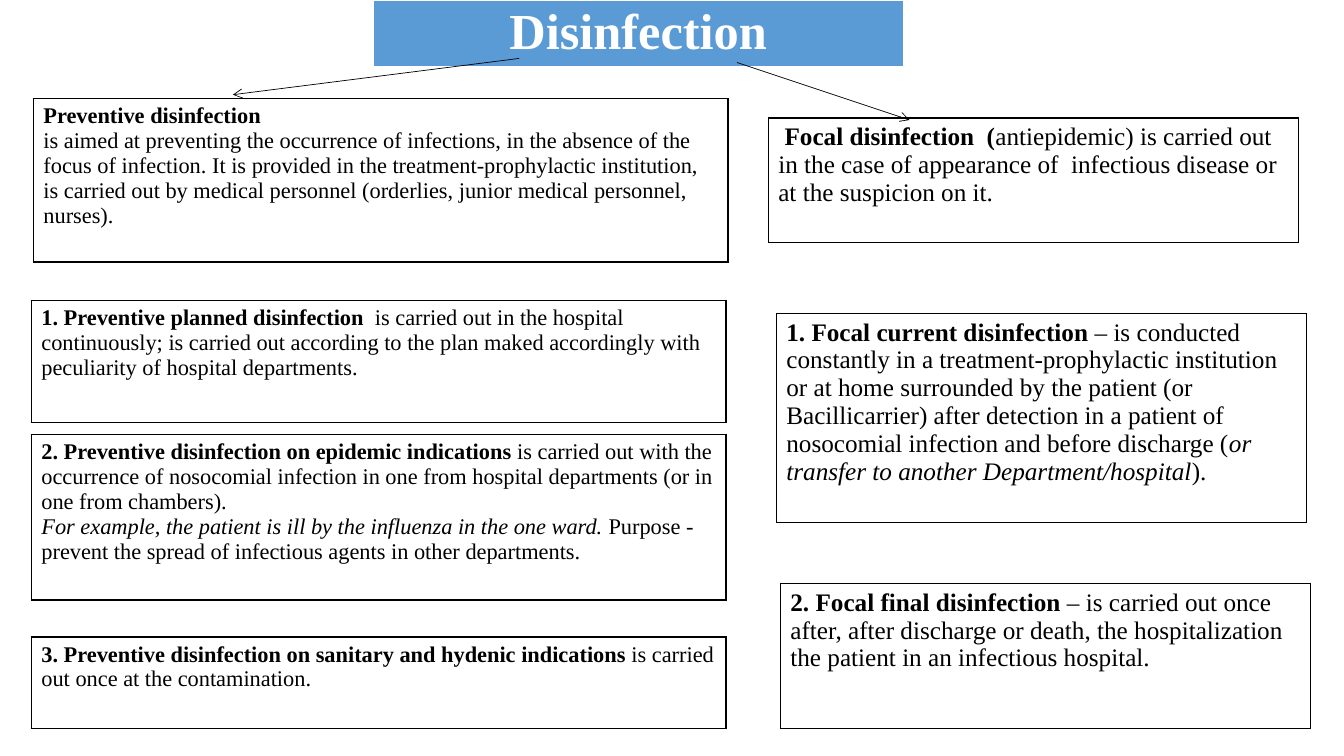
from lxml import etree
from pptx import Presentation, util as u
from pptx.dml.color import RGBColor
from pptx.enum import shapes, text
from pptx.oxml.ns import qn

COLORS = {"ink": "000000", "banner": "5B9BD5", "paper": "FFFFFF"}
FONT = "Times New Roman"
SLIDE_W, SLIDE_H = u.Inches(13.33), u.Inches(7.5)
# The slide is a grid of 100 columns by 100 rows
COL, ROW = SLIDE_W / 100, SLIDE_H / 100

BOLD, PLAIN, ITALIC = {"bold": True}, {"bold": False}, {"bold": False, "italic": True}

# Each card: offset in columns and rows from its region, height, paragraphs of runs
PREVENTIVE = [
    (0.15, 0, 21.6, [
        [("Preventive disinfection", BOLD)],
        [("is aimed at preventing the occurrence of infections, in the absence of the "
          "focus of infection. It is provided in the treatment-prophylactic institution, "
          "is carried out by medical personnel (orderlies, junior medical personnel, "
          "nurses).", PLAIN)]]),
    (0, 26.67, 16.13, [
        [("1. Preventive planned disinfection ", BOLD),
         (" is carried out in the hospital continuously; is carried out according to the "
          "plan maked accordingly with peculiarity of hospital departments.", PLAIN)]]),
    (0, 44.4, 21.9, [
        [("2. Preventive disinfection on epidemic indications ", BOLD),
         ("is carried out with the occurrence of nosocomial infection in one from "
          "hospital departments (or in one from chambers).", PLAIN)],
        [("For example, the patient is ill by the influenza in the one ward. ", ITALIC),
         ("Purpose - prevent the spread of infectious agents in other departments.",
          PLAIN)]]),
    (0, 71.2, 12.1, [
        [("3. Preventive disinfection on sanitary and hydenic indications", BOLD),
         (" is carried out once at the contamination.", PLAIN)]]),
]
FOCAL = [
    (0, 0, 16.5, [
        [(" Focal disinfection  (", BOLD),
         ("antiepidemic) is carried out in the case of appearance of  infectious disease "
          "or at the suspicion on it.", PLAIN)]]),
    (0.6, 25.87, 27.7, [
        [("1. Focal current disinfection ", BOLD),
         ("– is conducted constantly in a treatment-prophylactic institution or at home "
          "surrounded by the patient (or Bacillicarrier) after detection in a patient of "
          "nosocomial infection and before discharge (", PLAIN),
         ("or transfer to another Department/hospital", ITALIC),
         (").", PLAIN)]]),
    (0.9, 61.6, 19.2, [
        [("2. Focal final disinfection ", BOLD),
         ("– is carried out once after, after discharge or death, the hospitalization "
          "the patient in an infectious hospital.", PLAIN)]]),
]
# Arrow starts and ends, in columns and rows from the banner's corner
BRANCHES = [((10.87, 7.73), (-10.43, 12.53)), ((27.08, 8.27), (39.91, 15.87))]


def place(left, top, width, height):
    return int(left * COL), int(top * ROW), int(width * COL), int(height * ROW)


def set_borders(cell, color):
    tc_pr = cell._tc.get_or_add_tcPr()
    for side in ("lnL", "lnR", "lnT", "lnB"):
        border = etree.SubElement(tc_pr, qn(f"a:{side}"), w=str(u.Pt(1)))
        fill = etree.SubElement(border, qn("a:solidFill"))
        etree.SubElement(fill, qn("a:srgbClr"), val=color)


def add_card(slide, box, paragraphs, size, ink="ink", edge="ink", fill=None, align=None):
    """One-cell table filling the given box."""
    table = slide.shapes.add_table(1, 1, *place(*box)).table
    for flag in ("first_row", "horz_banding"):
        setattr(table, flag, False)
    cell = table.cell(0, 0)
    set_borders(cell, COLORS[edge])
    if fill:
        cell.fill.solid()
        cell.fill.fore_color.rgb = RGBColor.from_string(COLORS[fill])
    else:
        cell.fill.background()
    frame = cell.text_frame
    for index, runs in enumerate(paragraphs):
        paragraph = frame.add_paragraph() if index else frame.paragraphs[0]
        paragraph.alignment = align
        for words, style in runs:
            run = paragraph.add_run()
            run.text = words
            for name, value in {"name": FONT, "size": u.Pt(size), **style}.items():
                setattr(run.font, name, value)
            run.font.color.rgb = RGBColor.from_string(COLORS[ink])


def add_banner(slide, box):
    add_card(slide, box, [[("Disinfection", BOLD)]], 36, ink="paper", edge="paper",
             fill="banner", align=text.PP_ALIGN.CENTER)


def add_column(slide, box, cards, size):
    left, top, width = box
    for dx, dy, height, paragraphs in cards:
        add_card(slide, (left + dx, top + dy, width, height), paragraphs, size)


def add_branches(slide, box):
    left, top = box[:2]
    for (x1, y1), (x2, y2) in BRANCHES:
        start, end = place(left + x1, top + y1, left + x2, top + y2)[:2], \
            place(left + x2, top + y2, 0, 0)[:2]
        branch = slide.shapes.add_connector(shapes.MSO_CONNECTOR.STRAIGHT, *start, *end)
        branch.line.width = u.Pt(0.5)
        branch.line.color.rgb = RGBColor.from_string(COLORS["ink"])
        etree.SubElement(branch.line._get_or_add_ln(), qn("a:tailEnd"), type="arrow")
        etree.SubElement(branch._element.spPr, qn("a:effectLst"))


def main():
    deck = Presentation()
    deck.slide_width, deck.slide_height = SLIDE_W, SLIDE_H
    slide = deck.slides.add_slide(deck.slide_layouts[6])
    banner = (27.76, 0, 39.46, 8.8)
    # Title banner
    add_banner(slide, banner)
    # Preventive kinds on the left, focal kinds on the right
    add_column(slide, (2.33, 13.07, 51.69), PREVENTIVE, 16)
    add_column(slide, (57.16, 15.6, 39.46), FOCAL, 18)
    # Arrows from the banner to both columns
    add_branches(slide, banner)
    deck.save("out.pptx")


if __name__ == "__main__":
    main()
